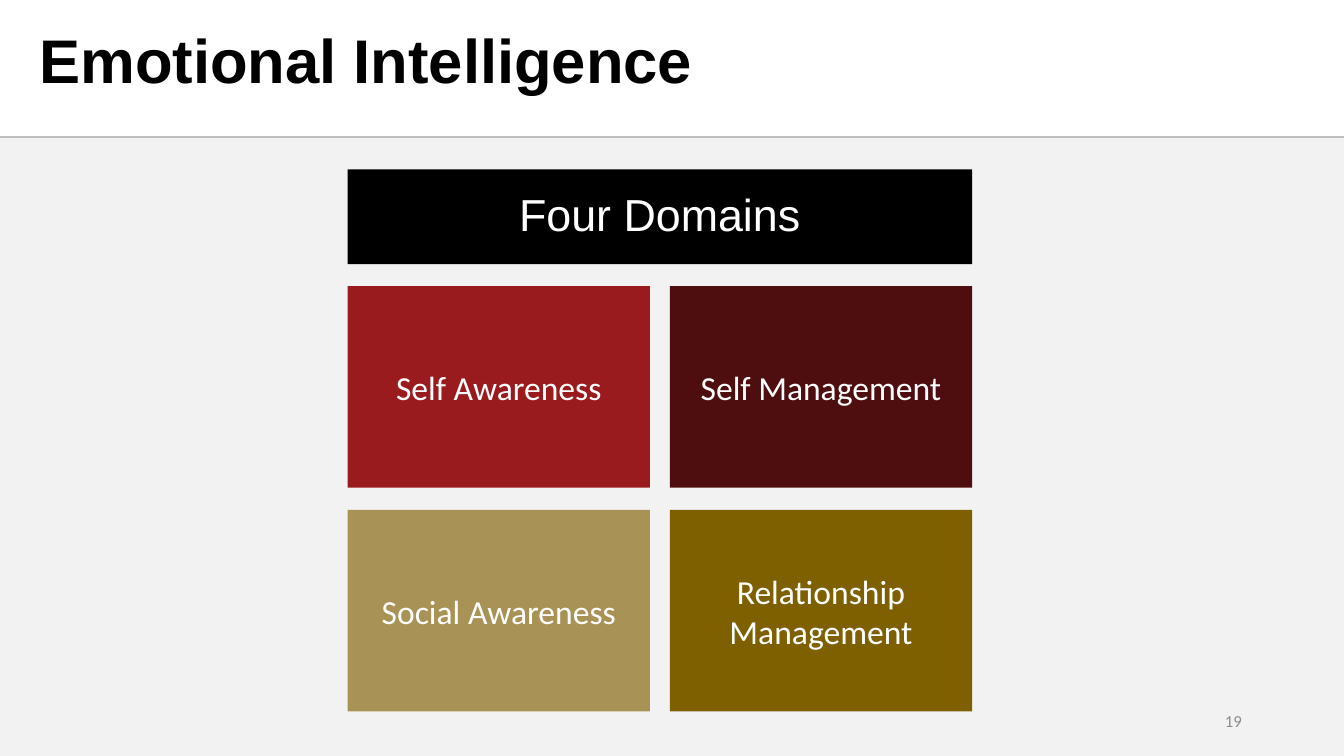
from pptx import Presentation
from pptx.dml.color import RGBColor
from pptx.enum.shapes import MSO_CONNECTOR, MSO_SHAPE
from pptx.enum.text import MSO_ANCHOR, PP_ALIGN
from pptx.oxml.ns import qn
from pptx.util import Cm, Pt
from lxml.etree import SubElement

COLORS = {
    "white": "FFFFFF",
    "black": "000000",
    "panel": "F2F2F2",
    "rule": "BFBFBF",
    "number": "8C8C8C",
    "red": "991B1E",
    "maroon": "4E0E10",
    "sand": "A99256",
    "olive": "7E6000",
}
DOMAINS = [
    ("Self Awareness", "red"),
    ("Self Management", "maroon"),
    ("Social Awareness", "sand"),
    ("Relationship Management", "olive"),
]
SLIDE_W, SLIDE_H = 33.87, 19.05
PANEL_TOP = 3.48
GRID_LEFT, GRID_TOP = 8.76, 7.21
TILE_W, TILE_H = 7.62, 5.08
PITCH_X, PITCH_Y = 8.12, 5.64


def rgb(name):
    return RGBColor.from_string(COLORS[name])


def write(shape, text, size, font, color, align, anchor, bold=False):
    tf = shape.text_frame
    tf.word_wrap = True
    tf.vertical_anchor = anchor
    p = tf.paragraphs[0]
    p.text = text
    p.alignment = align
    p.font.size = Pt(size)
    p.font.name = font
    p.font.bold = bold
    p.font.color.rgb = rgb(color)
    return p


def add_block(s, left, top, width, height, fill):
    sp = s.shapes.add_shape(
        MSO_SHAPE.RECTANGLE, Cm(left), Cm(top), Cm(width), Cm(height))
    sp.shadow.inherit = False
    sp.fill.solid()
    sp.fill.fore_color.rgb = rgb(fill)
    sp.line.fill.background()
    return sp


def add_tile(s, left, top, width, height, fill, text, size, font):
    sp = add_block(s, left, top, width, height, fill)
    return write(sp, text, size, font, "white", PP_ALIGN.CENTER, MSO_ANCHOR.MIDDLE)


def add_label(s, left, top, width, height, *style, **options):
    sp = s.shapes.add_textbox(Cm(left), Cm(top), Cm(width), Cm(height))
    return write(sp, *style, **options)


def add_rule(s, y):
    line = s.shapes.add_connector(
        MSO_CONNECTOR.STRAIGHT, Cm(0), Cm(y), Cm(SLIDE_W), Cm(y))
    line.line.color.rgb = rgb("rule")
    line.line.width = Pt(1.5)
    SubElement(line._element.spPr, qn("a:effectLst"))


def main():
    prs = Presentation()
    prs.slide_width, prs.slide_height = Cm(SLIDE_W), Cm(SLIDE_H)
    s = prs.slides.add_slide(prs.slide_layouts[6])

    add_block(s, 0, PANEL_TOP, SLIDE_W, SLIDE_H - PANEL_TOP, "panel")
    add_rule(s, 3.45)
    add_label(s, 0.74, 0.43, 22.43, 2.13, "Emotional Intelligence", 44, "Arial",
              "black", PP_ALIGN.LEFT, MSO_ANCHOR.TOP, bold=True)

    header = add_tile(s, GRID_LEFT, 4.27, PITCH_X + TILE_W, 2.39, "black",
                      "Four Domains", 32, "Arial")
    header.line_spacing = 0.9
    for i, (name, fill) in enumerate(DOMAINS):
        row, col = divmod(i, 2)
        add_tile(s, GRID_LEFT + col * PITCH_X, GRID_TOP + row * PITCH_Y,
                 TILE_W, TILE_H, fill, name, 24, "Calibri")

    add_label(s, 23.93, 17.65, 7.62, 1.02, "19", 12, "Calibri", "number",
              PP_ALIGN.RIGHT, MSO_ANCHOR.MIDDLE)
    prs.save("out.pptx")


if __name__ == "__main__":
    main()
